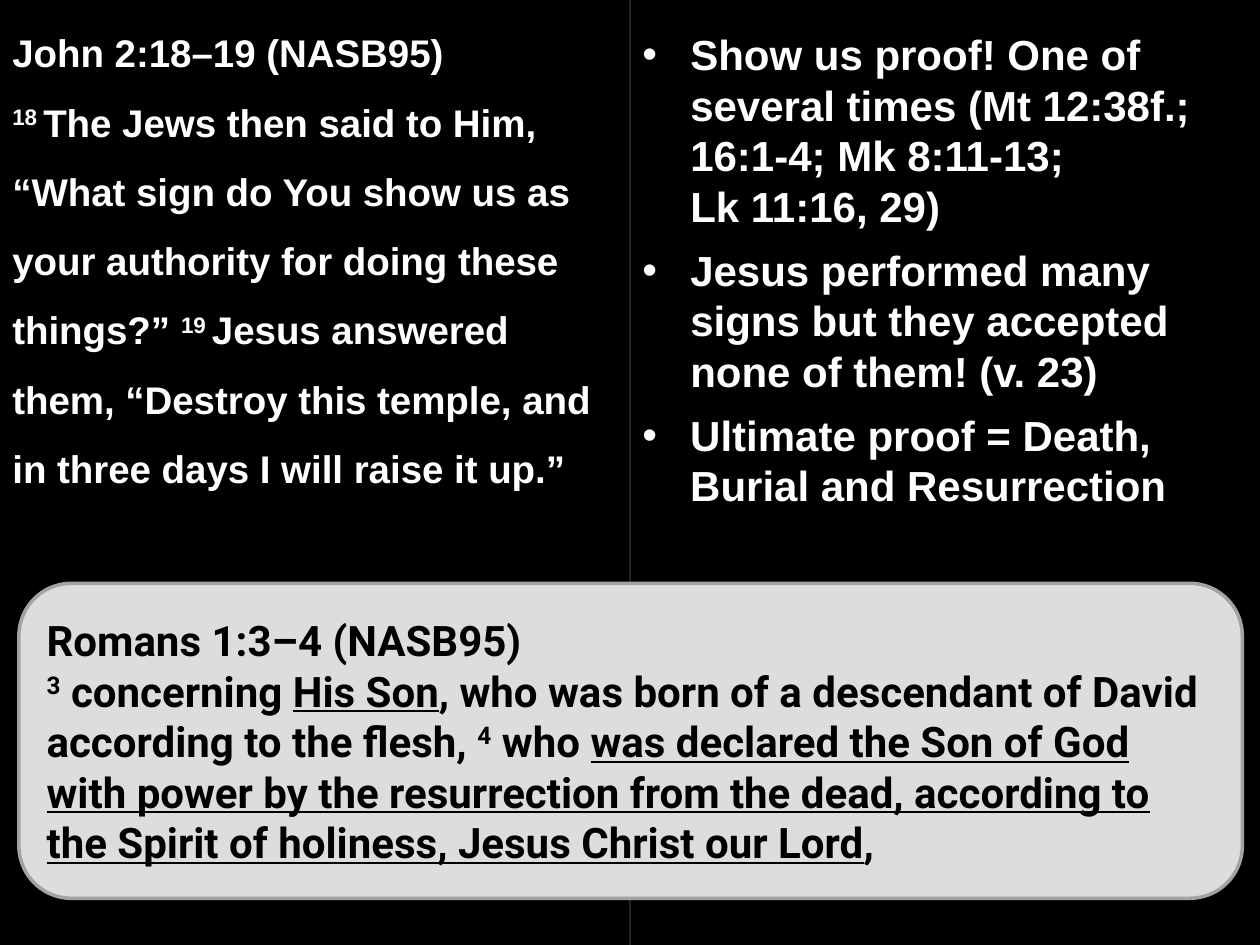
from lxml import etree
from pptx import Presentation
from pptx import util as u
from pptx.dml import color
from pptx.enum import shapes, text
from pptx.oxml import ns

COLORS = {"night": "000000", "light": "FFFFFF", "divider": "D8D8D8",
          "card": "DDDDDD", "card_edge": "A3A3A3"}
WIDTH, HEIGHT = u.Inches(10), u.Inches(7.5)
INDENT = u.Inches(0.38)
LINE_ROW = 0.4  # inches taken by one line of bullet text
BOX_PADDING = 0.11

PASSAGE = [
    [("John 2:18–19 (NASB95)", "")],
    [("18 ", "super"),
     ("The Jews then said to Him, “What sign do You show us as your authority "
      "for doing these things?” ", ""),
     ("19 ", "super"),
     ("Jesus answered them, “Destroy this temple, and in three days I will "
      "raise it up.”", "")],
]
POINTS = [  # lines of text, width in inches, wording
    (4, 4.95, ["Show us proof! One of several times (Mt 12:38f.; 16:1-4; Mk 8:11-13; ",
               "Lk 11:16, 29)"]),
    (3, 4.95, ["Jesus performed many signs but they accepted none of them! (v. 23)"]),
    (2, 4.43, ["Ultimate proof = Death, Burial and Resurrection"]),
]
CROSS_REFERENCE = [
    [("Romans 1:3–4 (NASB95)", "")],
    [("3", "super"), (" concerning ", ""), ("His Son", "underline"),
     (", who was born of a descendant of David according to the flesh, ", ""),
     ("4", "super"), (" who ", ""),
     ("was declared the Son of God with power by the resurrection from the "
      "dead, according to the Spirit of holiness, Jesus Christ our Lord", "underline"),
     (",", "")],
]


def rgb(name):
    return color.RGBColor.from_string(COLORS[name])


def set_alpha(fill, percent):
    clr = fill._xPr.find(".//" + ns.qn("a:srgbClr"))
    etree.SubElement(clr, ns.qn("a:alpha")).set("val", str(percent * 1000))


def format_span(span, size, font, ink):
    for name, value in {"size": u.Pt(size), "name": font, "bold": True}.items():
        setattr(span.font, name, value)
    span.font.color.rgb = rgb(ink)


def write_verses(frame, verses, size, font, ink, spacing=None):
    for number, verse in enumerate(verses):
        para = frame.add_paragraph() if number else frame.paragraphs[0]
        para.alignment = text.PP_ALIGN.LEFT
        para.line_spacing = spacing
        for words, style in verse:
            span = para.add_run()
            span.text = words
            format_span(span, size, font, ink)
            if style == "super":
                span._r.get_or_add_rPr().set("baseline", "30000")
            elif style == "underline":
                span.font.underline = True


def add_text_box(page, left, top, width, height):
    frame = page.shapes.add_textbox(left, top, width, height).text_frame
    frame.word_wrap = True
    frame.auto_size = text.MSO_AUTO_SIZE.SHAPE_TO_FIT_TEXT
    return frame


def add_backdrop(page):
    """Black page, dark veil and the rule between the two columns."""
    page.background.fill.solid()
    page.background.fill.fore_color.rgb = rgb("night")
    veil = page.shapes.add_shape(shapes.MSO_SHAPE.RECTANGLE, 0, 0, WIDTH, HEIGHT)
    veil.shadow.inherit = False
    veil.fill.solid()
    veil.fill.fore_color.rgb = rgb("night")
    set_alpha(veil.fill, 85)
    veil.line.fill.background()

    middle = WIDTH // 2
    rule = page.shapes.add_connector(shapes.MSO_CONNECTOR.STRAIGHT,
                                     middle, 0, middle, HEIGHT)
    rule.line.width = u.Pt(0.75)
    rule.line.color.rgb = rgb("divider")
    set_alpha(rule.line.fill, 25)
    etree.SubElement(rule._element.spPr, ns.qn("a:effectLst"))


def add_passage(page, left, top, width, height):
    frame = add_text_box(page, left, top, width, height)
    write_verses(frame, PASSAGE, 22, "Arial", "light", 1.5)


def add_points(page, left, top):
    """Stack one text box per bullet, each as tall as its lines."""
    for rows, width, lines in POINTS:
        height = u.Inches(rows * LINE_ROW + BOX_PADDING)
        frame = add_text_box(page, left, top, u.Inches(width), height)
        para = frame.paragraphs[0]
        props = para._p.get_or_add_pPr()
        props.set("marL", str(INDENT))
        props.set("indent", str(-INDENT))
        etree.SubElement(props, ns.qn("a:buFont")).set("typeface", "Arial")
        etree.SubElement(props, ns.qn("a:buChar")).set("char", "•")
        para.space_after = u.Pt(10)
        for number, line in enumerate(lines):
            if number:
                para.add_line_break()
            span = para.add_run()
            span.text = line
            format_span(span, 24, "Arial", "light")
        top += height


def add_cross_reference(page, left, top, width, height):
    card = page.shapes.add_shape(shapes.MSO_SHAPE.ROUNDED_RECTANGLE,
                                 left, top, width, height)
    card.shadow.inherit = False
    card.fill.solid()
    card.fill.fore_color.rgb = rgb("card")
    card.line.color.rgb = rgb("card_edge")
    card.line.width = u.Pt(2)
    card.text_frame.word_wrap = True
    card.text_frame.vertical_anchor = text.MSO_ANCHOR.MIDDLE
    write_verses(card.text_frame, CROSS_REFERENCE, 24, "Roboto", "night")


def main():
    deck = Presentation()
    deck.slide_width, deck.slide_height = WIDTH, HEIGHT
    page = deck.slides.add_slide(deck.slide_layouts[6])
    add_backdrop(page)
    add_passage(page, 0, 0, WIDTH // 2, int(HEIGHT * 0.53))
    add_points(page, WIDTH // 2, u.Inches(0.18))
    add_cross_reference(page, u.Inches(0.15), u.Inches(4.63),
                        u.Inches(9.71), HEIGHT // 3)
    deck.save("out.pptx")


if __name__ == "__main__":
    main()
